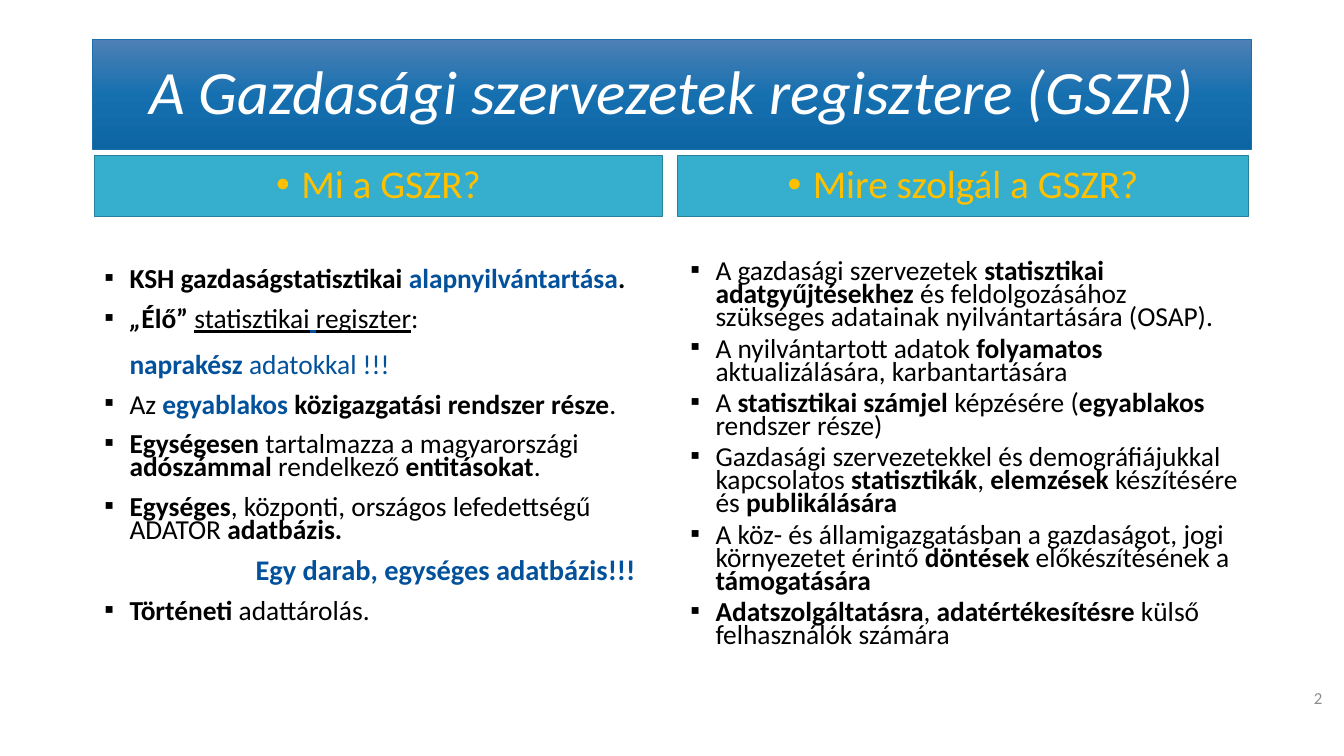
from dataclasses import dataclass
from copy import deepcopy

from lxml.etree import SubElement
from pptx import Presentation
from pptx.dml.color import RGBColor
from pptx.enum.shapes import MSO_SHAPE
from pptx.enum.text import MSO_ANCHOR, PP_ALIGN
from pptx.oxml.ns import qn
from pptx.util import Emu, Pt

SCALE = 9525  # EMU in one px, 96 px to the inch


@dataclass(frozen=True)
class Theme:
    font: str = "Calibri"
    ink: str = "000000"
    blue: str = "03519B"
    white: str = "FFFFFF"
    gold: str = "FFC000"
    grey: str = "8C8C8C"
    teal: str = "36AFCE"
    edge: str = "288198"
    rim: str = "1D6FA9"
    fade: tuple = ((0, "4E80B5"), (0.5, "1670B0"), (1, "0D65A3"))
    title: float = 44
    head: float = 28
    body: float = 19.6
    shout: float = 20.3
    small: float = 12


THEME = Theme()


@dataclass(frozen=True)
class Box:
    left: int
    top: int
    width: int
    height: int


@dataclass(frozen=True)
class Run:
    text: str
    bold: bool = False
    color: str = THEME.ink
    italic: bool = False
    under: bool = False


@dataclass(frozen=True)
class Item:
    runs: tuple
    bullet: str = "▪"
    indent: int = 24
    before: float = 6
    size: float = THEME.body


@dataclass(frozen=True)
class Column:
    title: str
    head: Box
    body: Box
    after: float
    items: tuple


def px(count):
    return Emu(count * SCALE)


def place(box):
    return [px(side) for side in (box.left, box.top, box.width, box.height)]


def bold(text, color=THEME.ink):
    return Run(text, True, color)


def item(*runs, **form):
    return Item(tuple(Run(r) if isinstance(r, str) else r for r in runs), **form)


COLUMNS = (
    Column("Mi a GSZR?", Box(90, 148, 541, 58), Box(90, 253, 540, 397), 6, (
        item(bold("KSH gazdaságstatisztikai "),
             bold("alapnyilvántartása", THEME.blue), bold(".")),
        item(Run("„", True, italic=True), bold("Élő” "),
             Run("statisztikai", under=True),
             Run(" ", True, THEME.blue, under=True),
             Run("regiszter", under=True), ":"),
        item(bold("naprakész", THEME.blue),
             Run(" adatokkal !!!", color=THEME.blue), bullet="", before=10),
        item("Az ", bold("egyablakos ", THEME.blue),
             bold("közigazgatási rendszer része"), "."),
        item(bold("Egységesen"), " tartalmazza a magyarországi ",
             bold("adószámmal"), " rendelkező ", bold("entitásokat"), "."),
        item(bold("Egységes"), ", központi, országos lefedettségű ADATOR ",
             bold("adatbázis.")),
        item(bold("Egy darab, egységes adatbázis!!!", THEME.blue),
             bullet="", indent=144, size=THEME.shout),
        item(bold("Történeti"), " adattárolás."),
    )),
    Column("Mire szolgál a GSZR?", Box(645, 148, 544, 58), Box(648, 245, 544, 405), 0, (
        item("A gazdasági szervezetek ", bold("statisztikai adatgyűjtésekhez "),
             "és feldolgozásához szükséges adatainak nyilvántartására (OSAP)."),
        item("A nyilvántartott adatok ", bold("folyamatos"),
             " aktualizálására, karbantartására"),
        item("A ", bold("statisztikai számjel "), "képzésére (",
             bold("egyablakos"), " rendszer része)"),
        item("Gazdasági szervezetekkel és demográfiájukkal kapcsolatos ",
             bold("statisztikák"), ", ", bold("elemzések"),
             " készítésére és ", bold("publikálására")),
        item("A köz- és államigazgatásban a gazdaságot, jogi környezetet érintő ",
             bold("döntések"), " előkészítésének a ", bold("támogatására")),
        item(bold("Adatszolgáltatásra"), ", ", bold("adatértékesítésre"),
             " külső felhasználók számára"),
    )),
)


def write(para, text, *, size, color, bold=False, italic=False, under=False):
    run = para.add_run()
    run.text = text
    font = run.font
    font.name, font.size = THEME.font, Pt(size)
    font.bold, font.italic, font.underline = bold, italic, under
    font.color.rgb = RGBColor.from_string(color)


def mark(para, sign, indent):
    """Set the left indent and, if a sign is given, hang it as a bullet."""
    props = para._p.get_or_add_pPr()
    props.set("marL", str(px(indent)))
    props.set("indent", str(px(-24 if sign else 0)))
    if sign:
        SubElement(props, qn("a:buFont"), typeface="Arial")
        SubElement(props, qn("a:buChar"), char=sign)
    else:
        SubElement(props, qn("a:buNone"))


def add_bar(slide, box, edge, weight):
    bar = slide.shapes.add_shape(MSO_SHAPE.RECTANGLE, *place(box))
    bar.shadow.inherit = False
    bar.line.color.rgb = RGBColor.from_string(edge)
    bar.line.width = Pt(weight)
    frame = bar.text_frame
    frame.word_wrap = True
    frame.vertical_anchor = MSO_ANCHOR.MIDDLE
    para = frame.paragraphs[0]
    para.alignment = PP_ALIGN.CENTER
    para.line_spacing = 0.9
    return bar, para


def add_text(slide, box):
    frame = slide.shapes.add_textbox(*place(box)).text_frame
    frame.word_wrap = True
    return frame


def add_title(slide, text):
    bar, para = add_bar(slide, Box(88, 38, 1104, 104), THEME.rim, 0.5)
    bar.fill.gradient()
    bar.fill.gradient_angle = 270
    stops = bar._element.spPr.find(".//" + qn("a:gsLst"))
    stops.append(deepcopy(stops[0]))
    for stop, (spot, color) in zip(bar.fill.gradient_stops, THEME.fade):
        stop.position = spot
        stop.color.rgb = RGBColor.from_string(color)
    write(para, text, size=THEME.title, color=THEME.white, italic=True)


def add_column(slide, column):
    bar, para = add_bar(slide, column.head, THEME.edge, 1)
    bar.fill.solid()
    bar.fill.fore_color.rgb = RGBColor.from_string(THEME.teal)
    mark(para, "•", 24)
    write(para, column.title, size=THEME.head, color=THEME.gold)

    frame = add_text(slide, column.body)
    for rank, entry in enumerate(column.items):
        para = frame.add_paragraph() if rank else frame.paragraphs[0]
        para.line_spacing = 0.7
        para.space_before = Pt(entry.before if rank else 0)
        para.space_after = Pt(column.after)
        mark(para, entry.bullet, entry.indent)
        for run in entry.runs:
            write(para, run.text, size=entry.size, color=run.color,
                  bold=run.bold, italic=run.italic, under=run.under)


def add_number(slide, text):
    frame = add_text(slide, Box(1240, 646, 29, 38))
    frame.vertical_anchor = MSO_ANCHOR.MIDDLE
    para = frame.paragraphs[0]
    para.alignment = PP_ALIGN.RIGHT
    write(para, text, size=THEME.small, color=THEME.grey)


def main():
    deck = Presentation()
    deck.slide_width, deck.slide_height = px(1280), px(720)
    slide = deck.slides.add_slide(deck.slide_layouts[6])
    add_number(slide, "2")
    add_title(slide, "A Gazdasági szervezetek regisztere (GSZR)")
    for column in COLUMNS:
        add_column(slide, column)
    deck.save("out.pptx")


if __name__ == "__main__":
    main()
